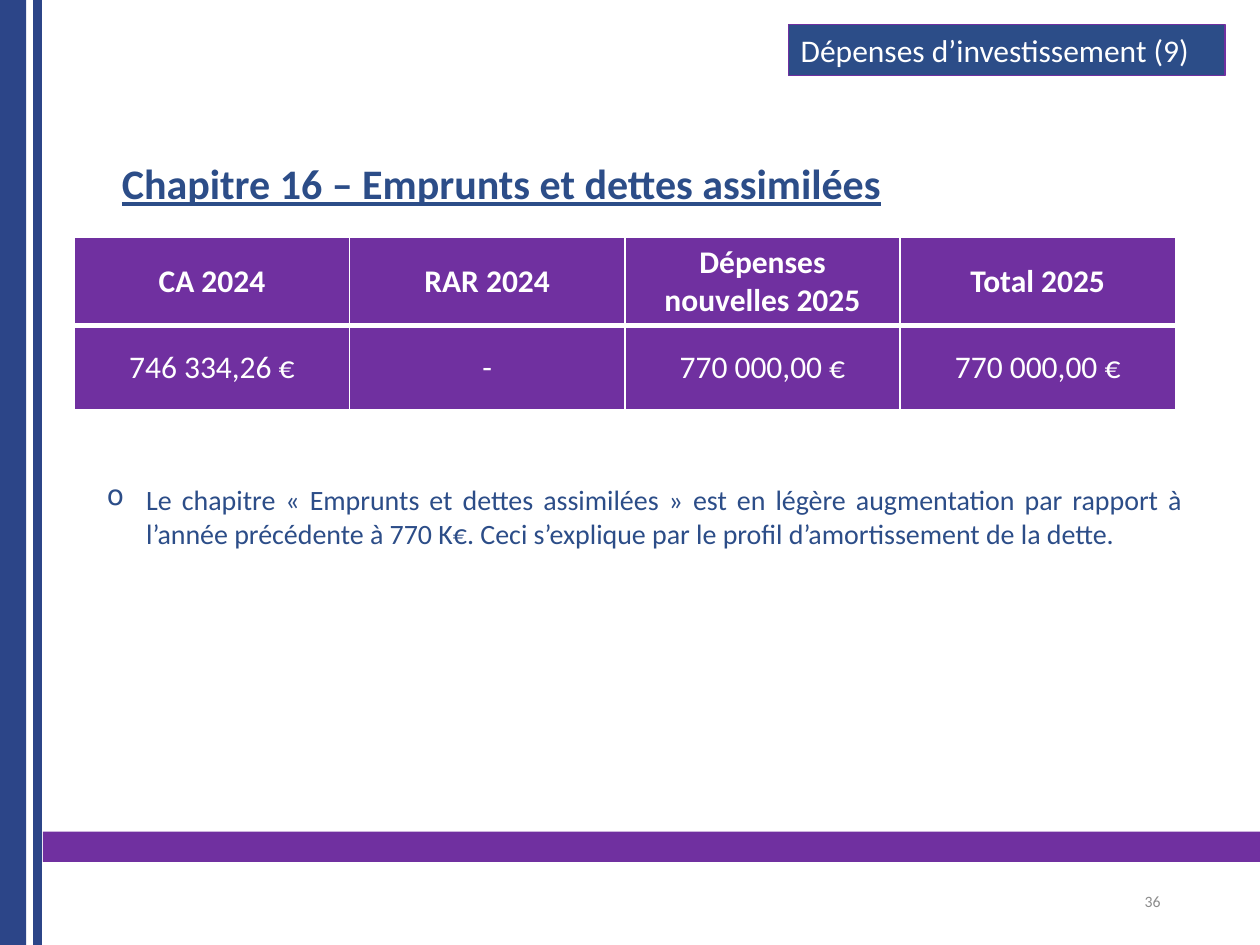
from lxml.etree import SubElement
from pptx import Presentation
from pptx.dml.color import RGBColor
from pptx.enum.shapes import MSO_SHAPE
from pptx.enum.text import MSO_ANCHOR, PP_ALIGN
from pptx.oxml.ns import qn
from pptx.util import Pt

BLUE, NAVY, PURPLE = "2C4D88", "2C4588", "7030A0"
WHITE, GREY = "FFFFFF", "8C8C8C"
HEADERS = ["CA 2024", "RAR 2024", "Dépenses nouvelles 2025", "Total 2025"]
AMOUNTS = ["746 334,26 €", "-", "770 000,00 €", "770 000,00 €"]


def rgb(color):
    return RGBColor.from_string(color)


def write(tf, text, size, color=BLUE, bold=False, underline=False,
          align=PP_ALIGN.LEFT, anchor=MSO_ANCHOR.TOP, left=0, hanging=0,
          bullet=None, spacing=None):
    """Fill a text frame with one formatted paragraph; indents are in points."""
    tf.word_wrap = True
    tf.vertical_anchor = anchor
    p = tf.paragraphs[0]
    p.alignment = align
    if spacing:
        p.line_spacing = spacing
    pPr = p._p.get_or_add_pPr()
    pPr.set("marL", str(Pt(left)))
    pPr.set("indent", str(-Pt(hanging)))
    if bullet:
        SubElement(pPr, qn("a:buChar"), char=bullet)
    r = p.add_run()
    r.text = text
    r.font.name = "Calibri"
    r.font.size = Pt(size)
    r.font.bold = bold
    r.font.underline = underline
    r.font.color.rgb = rgb(color)


def add_text(s, x, y, w, h, text, size, **style):
    box = s.shapes.add_textbox(Pt(x), Pt(y), Pt(w), Pt(h))
    write(box.text_frame, text, size, **style)


def add_bar(s, x, y, w, h, fill, line=None):
    sp = s.shapes.add_shape(MSO_SHAPE.RECTANGLE, Pt(x), Pt(y), Pt(w), Pt(h))
    sp.shadow.inherit = False
    sp.fill.solid()
    sp.fill.fore_color.rgb = rgb(fill)
    if line:
        sp.line.color.rgb = rgb(line)
        sp.line.width = Pt(0.75)
    else:
        sp.line.fill.background()
    return sp


def set_borders(cell, **widths):
    """Draw white borders, with widths in points keyed L, R, T and B."""
    tcPr = cell._tc.get_or_add_tcPr()
    for i, (side, width) in enumerate(widths.items()):
        ln = tcPr.makeelement(qn(f"a:ln{side}"), {"w": str(Pt(width))})
        fill = SubElement(ln, qn("a:solidFill"))
        SubElement(fill, qn("a:srgbClr"), val=WHITE)
        tcPr.insert(i, ln)


def add_budget_table(s, x, y, w, heights):
    frame = s.shapes.add_table(2, len(HEADERS), Pt(x), Pt(y), Pt(w), Pt(sum(heights)))
    table = frame.table
    for column in table.columns:
        column.width = Pt(w / len(HEADERS))
    for i, values in enumerate([HEADERS, AMOUNTS]):
        table.rows[i].height = Pt(heights[i])
        header = i == 0
        for j, text in enumerate(values):
            cell = table.cell(i, j)
            cell.fill.solid()
            cell.fill.fore_color.rgb = rgb(PURPLE)
            cell.vertical_anchor = MSO_ANCHOR.MIDDLE
            write(cell.text_frame, text, 18, color=WHITE, bold=header,
                  align=PP_ALIGN.CENTER, anchor=None)
            set_borders(cell, L=1, R=1, T=1 if header else 3, B=3 if header else 1)


def main():
    prs = Presentation()
    prs.slide_width, prs.slide_height = Pt(720), Pt(540)
    s = prs.slides.add_slide(prs.slide_layouts[6])

    add_bar(s, 24.5, 475.2, 695.5, 17.3, PURPLE)
    add_bar(s, 0, 0, 15, 540, NAVY)
    add_bar(s, 19, 0, 5, 540, NAVY)

    add_text(s, 54, 90, 659, 45, "Chapitre 16 – Emprunts et dettes assimilées", 24,
             bold=True, underline=True, left=8.6, spacing=0.9)
    add_text(s, 508.3, 500.4, 162, 28.8, "36", 9, color=GREY,
             align=PP_ALIGN.RIGHT, anchor=MSO_ANCHOR.MIDDLE)
    add_text(s, 54, 272.2, 629, 65.5,
             "Le chapitre « Emprunts et dettes assimilées » est en légère augmentation "
             "par rapport à l’année précédente à 770 K€. Ceci s’explique par le profil "
             "d’amortissement de la dette.", 16,
             align=PP_ALIGN.JUSTIFY, left=22.5, hanging=22.5, bullet="o")

    banner = add_bar(s, 450.5, 14.2, 249.5, 29, BLUE, line=PURPLE)
    write(banner.text_frame, "Dépenses d’investissement (9)", 18, color=WHITE)

    add_budget_table(s, 42.5, 135.5, 629.2, [47.8, 48.2])
    prs.save("out.pptx")


if __name__ == "__main__":
    main()
